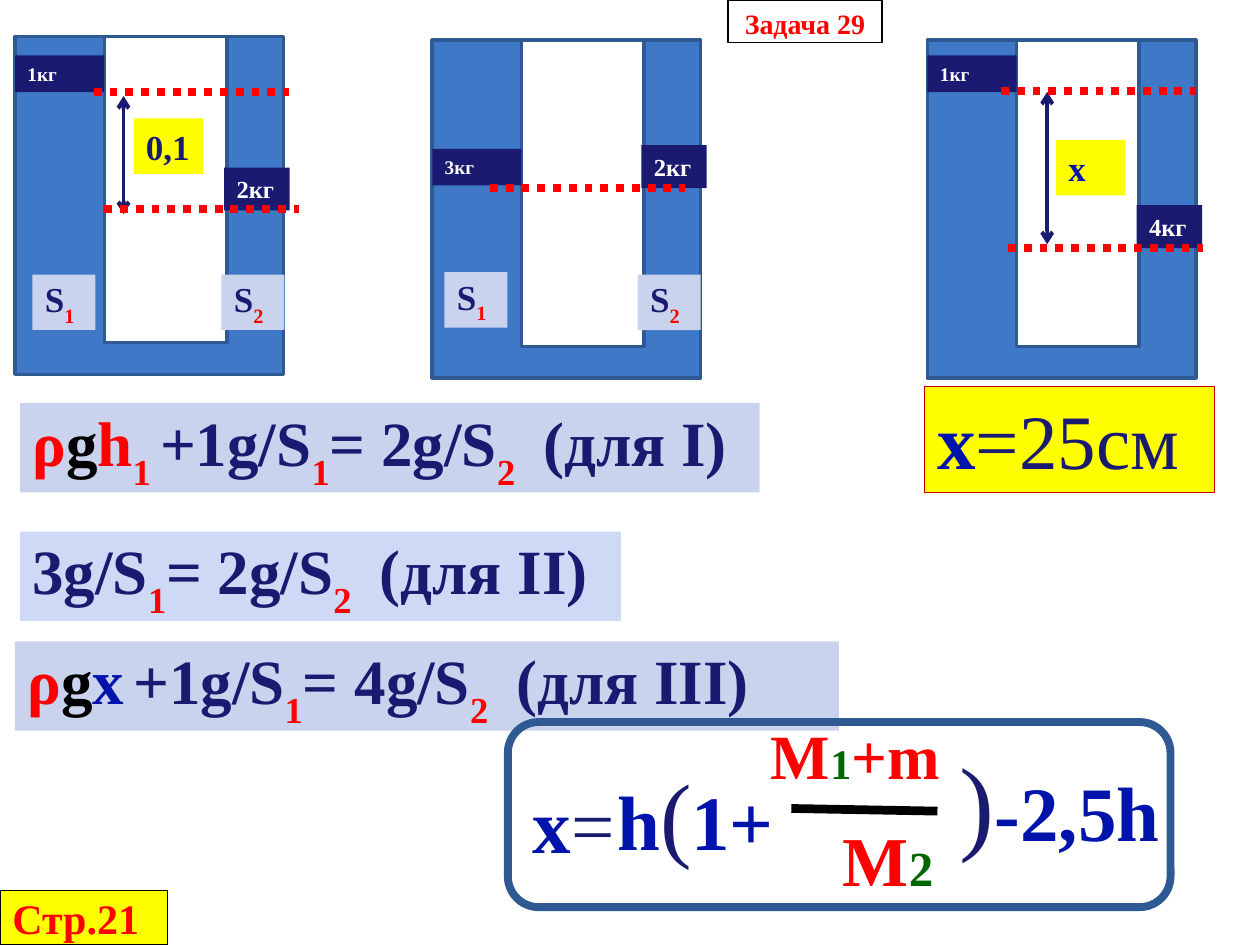
from dataclasses import dataclass

from lxml.etree import SubElement
from pptx import Presentation
from pptx.dml.color import RGBColor
from pptx.enum.dml import MSO_LINE
from pptx.enum.shapes import MSO_CONNECTOR, MSO_SHAPE
from pptx.enum.text import MSO_ANCHOR, MSO_AUTO_SIZE, PP_ALIGN
from pptx.oxml.ns import qn
from pptx.util import Pt


@dataclass(frozen=True)
class Theme:
    font: str = "Times New Roman"
    navy: str = "1A1A70"
    blue: str = "0014AC"
    red: str = "FF0000"
    green: str = "006600"
    black: str = "000000"
    white: str = "FFFFFF"
    yellow: str = "FFFF00"
    water: str = "3E78C6"
    wall: str = "2E5992"
    pale: str = "C9D3ED"
    light: str = "CED9F6"
    crimson: str = "C00000"
    small: float = 11
    load: float = 14
    title: float = 16
    label: float = 20
    page: float = 24
    index: float = 28
    equation: float = 36
    denominator: float = 40
    result: float = 44
    left_bracket: float = 54
    right_bracket: float = 60


THEME = Theme()


@dataclass(frozen=True)
class Part:
    text: str
    color: str = THEME.navy
    size: float = 0
    bold: bool = True
    sub: bool = False
    spacing: float = 0


def color(value):
    return RGBColor.from_string(value)


def write(frame, parts, size, anchor=MSO_ANCHOR.TOP, wrap=True, align=PP_ALIGN.LEFT):
    frame.word_wrap = wrap
    frame.auto_size = MSO_AUTO_SIZE.NONE
    frame.vertical_anchor = anchor
    paragraph = frame.paragraphs[0]
    paragraph.alignment = align
    paragraph.font.name = THEME.font
    paragraph.font.size = Pt(size)
    for part in parts:
        run = paragraph.add_run()
        run.text = part.text
        run.font.name = THEME.font
        run.font.size = Pt(part.size or size)
        run.font.bold = part.bold
        run.font.color.rgb = color(part.color)
        properties = run.font._element
        if part.sub:
            properties.set("baseline", "-30000")
        if part.spacing:
            properties.set("spc", str(int(part.spacing * 100)))


def outline(shape, fill=None, line=None, width=0.75):
    if fill:
        shape.fill.solid()
        shape.fill.fore_color.rgb = color(fill)
    else:
        shape.fill.background()
    if line:
        shape.line.color.rgb = color(line)
        shape.line.width = Pt(width)
    else:
        shape.line.fill.background()


def add_box(shapes, box, fill=None, line=None, width=0.75, kind=MSO_SHAPE.RECTANGLE):
    shape = shapes.add_shape(kind, *map(Pt, box))
    shape.shadow.inherit = False
    outline(shape, fill, line, width)
    return shape


def add_label(shapes, box, parts, size, fill, line=None, anchor=MSO_ANCHOR.MIDDLE):
    write(add_box(shapes, box, fill, line).text_frame, parts, size, anchor)


def add_line(shapes, start, end, stroke, width, dash=None, arrows=False):
    line = shapes.add_connector(MSO_CONNECTOR.STRAIGHT, *map(Pt, (*start, *end)))
    line.line.color.rgb = color(stroke)
    line.line.width = Pt(width)
    if dash:
        line.line.dash_style = dash
    if arrows:
        for tip in ("a:headEnd", "a:tailEnd"):
            SubElement(line.line._get_or_add_ln(), qn(tip), type="arrow")
    SubElement(line._element.spPr, qn("a:effectLst"))


def add_vessel(shapes, left, top, loads, levels, areas=(), gap=None):
    vessel = shapes.add_group_shape().shapes
    add_box(vessel, (left, top, 153.4, 193), THEME.water, THEME.wall, 2)
    add_box(vessel, (left + 51, top, 70, 175), THEME.white, THEME.wall, 2)

    (left_load, left_y), (right_load, right_y) = loads
    add_label(shapes, (left, top + left_y, 51, 21),
              [Part(left_load, THEME.white)], THEME.small, THEME.navy)
    add_label(shapes, (left + 119.5, top + right_y, 37.4, 24.5),
              [Part(right_load, THEME.white)], THEME.load, THEME.navy)

    if gap:
        name, name_color, name_x, name_y, arrow_x, arrow_top, arrow_bottom = gap
        add_line(shapes, (left + arrow_x, top + arrow_top),
                 (left + arrow_x, top + arrow_bottom), THEME.navy, 2.25, arrows=True)
        add_label(shapes, (left + name_x, top + name_y, 39.6, 31.7),
                  [Part(name, name_color)], THEME.label, THEME.yellow)
    for x, y in levels:
        add_line(shapes, (left + x, top + y), (left + x + 111.4, top + y),
                 THEME.red, 4.5, MSO_LINE.ROUND_DOT)
    for number, (x, y) in enumerate(areas, 1):
        add_label(shapes, (left + x, top + y, 36, 31.7),
                  [Part("S"), Part(str(number), THEME.red, sub=True)],
                  THEME.label, THEME.pale)


def add_equation(shapes, box, start, right_side, case, fill):
    parts = [*start, Part("1", THEME.red, sub=True), Part(f"= {right_side}/S"),
             Part("2", THEME.red, sub=True), Part(" ", spacing=7), Part(f"(для {case})")]
    add_label(shapes, box, parts, THEME.equation, fill)


def add_formula(shapes, left, top, width, height):
    pieces = [
        ((7.2, 27.4, 62.6, 60.5), THEME.result,
         [Part("x", THEME.blue), Part("=", bold=False)], True),
        ((143.2, -6.5, 121, 51), THEME.equation,
         [Part("M", THEME.red), Part("1", THEME.green, THEME.page),
          Part("+m", THEME.red)], False),
        ((184.3, 50.4, 68.4, 60.5), THEME.denominator,
         [Part("M", THEME.red), Part("2", THEME.green, THEME.index)], True),
        ((251.2, 5, 143.3, 80), THEME.result,
         [Part(")", size=THEME.right_bracket, bold=False), Part("-2,5h", THEME.blue)], True),
        ((55.4, 15.8, 117.4, 72.7), THEME.result,
         [Part("h", THEME.blue), Part("(", size=THEME.left_bracket, bold=False),
          Part("1+", THEME.blue)], True),
    ]
    for (x, y, w, h), size, parts, wrap in pieces:
        piece = shapes.add_textbox(*map(Pt, (left + x, top + y, w, h)))
        write(piece.text_frame, parts, size, wrap=wrap)
    add_line(shapes, (left + 162, top + 49.4), (left + 245.5, top + 50.9), THEME.black, 5)
    add_box(shapes, (left, top, width, height), line=THEME.wall, width=4.5,
            kind=MSO_SHAPE.ROUNDED_RECTANGLE)


def add_heading(title, left, top, width, height):
    title.left, title.top, title.width, title.height = map(Pt, (left, top, width, height))
    outline(title, THEME.white, THEME.black)
    write(title.text_frame, [Part("Задача 29", THEME.red)],
          THEME.title, align=PP_ALIGN.CENTER)


def add_page_mark(shapes, box):
    frame = add_box(shapes, box, THEME.yellow, THEME.black).text_frame
    frame.margin_top = frame.margin_bottom = 0
    write(frame, [Part("Стр.21", THEME.red)], THEME.page, MSO_ANCHOR.MIDDLE)


def main():
    deck = Presentation()
    deck.slide_width, deck.slide_height = Pt(720), Pt(540)
    slide = deck.slides.add_slide(deck.slide_layouts[5])
    shapes = slide.shapes

    add_heading(shapes.title, 416, 0, 88, 24.5)
    add_vessel(shapes, 8.6, 20.9, [("1кг", 10.8), ("2кг", 74.9)],
               [(45, 31.7), (51, 98.6)], [(10, 136), (118, 136)],
               ("0,1", THEME.navy, 67.7, 46.8, 62, 34, 101.5))
    add_vessel(shapes, 247, 23, [("3кг", 62), ("2кг", 60)],
               [(33, 84.2)], [(7, 132.5), (117.4, 134)])
    add_vessel(shapes, 530, 23, [("1кг", 8.6), ("4кг", 94.3)],
               [(42, 28.8), (46, 118.8)],
               gap=("x", THEME.blue, 73.4, 57, 68.4, 29.5, 116.6))

    density = [Part("ρ", THEME.red), Part("g", THEME.black)]
    add_equation(shapes, (11.5, 230.4, 422.6, 51),
                 [*density, Part("h", THEME.red), Part("1 ", THEME.red, sub=True),
                  Part("+1g/S")], "2g", "I", THEME.pale)
    add_equation(shapes, (11.5, 303.8, 343.4, 51), [Part("3g/S")], "2g", "II", THEME.light)
    add_equation(shapes, (8.6, 366.5, 470.9, 51),
                 [*density, Part("x", THEME.blue), Part(" ", THEME.blue, sub=True),
                  Part("+1g/S")], "4g", "III", THEME.pale)

    add_formula(shapes, 290.2, 412.6, 378.7, 105.8)
    add_label(shapes, (528.5, 221, 165.6, 60.5),
              [Part("x", THEME.blue), Part("=25см", bold=False)],
              THEME.result, THEME.yellow, THEME.crimson, MSO_ANCHOR.TOP)
    add_page_mark(shapes, (0, 509, 95.8, 31))
    deck.save("out.pptx")


if __name__ == "__main__":
    main()
